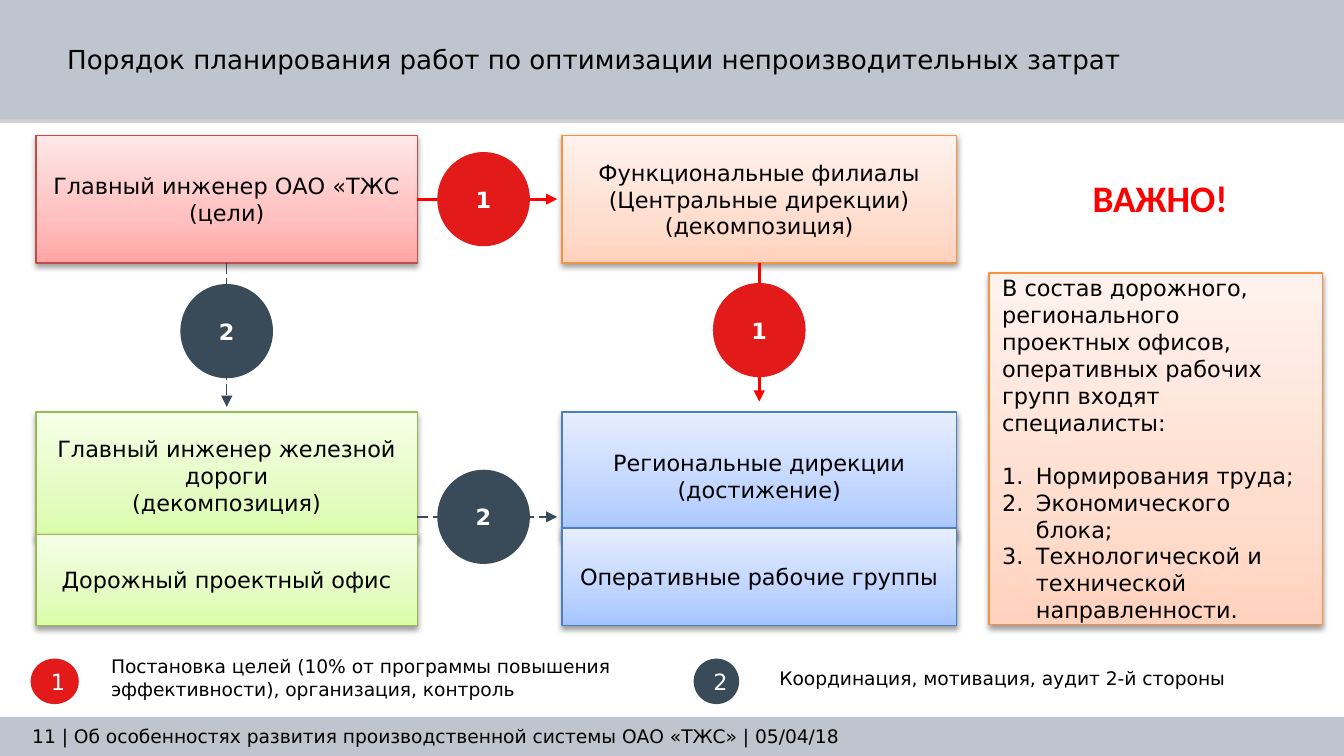
from lxml import etree
from pptx import Presentation
from pptx.dml.color import RGBColor
from pptx.enum.dml import MSO_LINE
from pptx.enum.shapes import MSO_CONNECTOR, MSO_SHAPE
from pptx.enum.text import MSO_ANCHOR, PP_ALIGN
from pptx.oxml.ns import qn
from pptx.util import Cm, Pt

RECT, OVAL = MSO_SHAPE.RECTANGLE, MSO_SHAPE.OVAL
STRAIGHT, LONG_DASH = MSO_CONNECTOR.STRAIGHT, MSO_LINE.LONG_DASH
LEFT, CENTER = PP_ALIGN.LEFT, PP_ALIGN.CENTER
TOP, MIDDLE = MSO_ANCHOR.TOP, MSO_ANCHOR.MIDDLE
SIDE_BOTTOM, SIDE_RIGHT = 2, 3

FONT = "DejaVu Sans"
BAND, RED, ARROW_RED, SLATE = "BFC5CE", "E21A1A", "FF0000", "394A58"
# Border, then gradient colours from bottom to top
PINK = ("BF4C48", "FFA6A5", "FFC0BF", "FFE7E7")
GREEN = ("98B955", "DAFDA7", "E4FCC2", "F5FFE7")
ORANGE = ("F69240", "FFD2BD", "FFDED0", "FFF2ED")
BLUE = ("4B7EBC", "A4C4FF", "BFD4FF", "E6EEFF")


def rgb(color):
    return RGBColor.from_string(color)


def sub(parent, tag, **attrs):
    return etree.SubElement(parent, qn(tag), {k: str(v) for k, v in attrs.items()})


def add_color(parent, color, alpha=100):
    clr = sub(parent, "a:srgbClr", val=color)
    if alpha < 100:
        sub(clr, "a:alpha", val=alpha * 1000)


def add_shadow(s, color, alpha, blur, dist):
    s.shadow.inherit = False
    effects = s._element.spPr.find(qn("a:effectLst"))
    shadow = sub(effects, "a:outerShdw", blurRad=Pt(blur), dist=Pt(dist),
                 dir=5400000, rotWithShape=0)
    add_color(shadow, color, alpha)


def set_gradient(s, colors):
    s.fill.gradient()
    s.fill.gradient_angle = 90
    stops = s._element.spPr.find(qn("a:gradFill")).find(qn("a:gsLst"))
    for old in list(stops):
        stops.remove(old)
    for pos, color in zip((0, 35, 100), colors):
        add_color(sub(stops, "a:gs", pos=pos * 1000), color)


def write(s, lines, size=12, color="000000", bold=False, align=CENTER,
          anchor=MIDDLE, font=FONT, numbered_from=None):
    """Write one paragraph per line; those from numbered_from on are a numbered list."""
    tf = s.text_frame
    tf.word_wrap = True
    tf.vertical_anchor = anchor
    for i, line in enumerate(lines):
        p = tf.paragraphs[0] if i == 0 else tf.add_paragraph()
        p.alignment = align
        if numbered_from is not None and i >= numbered_from:
            if i == numbered_from:
                p.space_before = Pt(14)
            pPr = p._p.get_or_add_pPr()
            pPr.set("marL", str(Cm(0.64)))
            pPr.set("indent", str(-Cm(0.64)))
            sub(pPr, "a:buFont", typeface="+mj-lt")
            sub(pPr, "a:buAutoNum", type="arabicPeriod")
        r = p.add_run()
        r.text = line
        r.font.name, r.font.size, r.font.bold = font, Pt(size), bold
        r.font.color.rgb = rgb(color)


def add_text(slide, x, y, w, h, lines, inset=0.25, **style):
    s = slide.shapes.add_textbox(Cm(x), Cm(y), Cm(w), Cm(h))
    s.text_frame.margin_left = Cm(inset)
    write(s, lines, **style)


def add_plain(slide, kind, x, y, w, h, color):
    s = slide.shapes.add_shape(kind, Cm(x), Cm(y), Cm(w), Cm(h))
    s.fill.solid()
    s.fill.fore_color.rgb = rgb(color)
    s.line.fill.background()
    s.shadow.inherit = False
    return s


def add_card(slide, x, y, w, h, palette, lines, **style):
    s = slide.shapes.add_shape(RECT, Cm(x), Cm(y), Cm(w), Cm(h))
    set_gradient(s, palette[1:])
    s.line.color.rgb = rgb(palette[0])
    s.line.width = Pt(0.75)
    add_shadow(s, "000000", 38, 3.1, 1.6)
    write(s, lines, **style)
    return s


def add_badge(slide, x, y, w, h, number, color, bold=True):
    s = add_plain(slide, OVAL, x, y, w, h, color)
    write(s, [number], color="FFFFFF", bold=bold)


def add_arrow(slide, x1, y1, x2, y2, color, width, dashed=False, start=None):
    """Draw an arrow; start is an optional (shape, side) to join its beginning to."""
    s = slide.shapes.add_connector(STRAIGHT, Cm(x1), Cm(y1), Cm(x2), Cm(y2))
    if start:
        s.begin_connect(*start)
    s.line.color.rgb = rgb(color)
    s.line.width = Pt(width)
    if dashed:
        s.line.dash_style = LONG_DASH
    sub(s.line._get_or_add_ln(), "a:tailEnd", type="triangle")
    sub(s._element.spPr, "a:effectLst")


def add_band(slide, x, y, w, h):
    add_shadow(add_plain(slide, RECT, x, y, w, h, BAND), "808080", 35, 0, 1.8)


def add_header(slide, x, y, w, h):
    add_band(slide, x, y, w, h)
    add_text(slide, x, y + 0.69, w, 0.86,
             ["Порядок планирования работ по оптимизации непроизводительных затрат"],
             inset=1.27, size=14, align=LEFT, anchor=TOP)


def add_footer(slide, x, y, w, h):
    add_band(slide, x, y, w, h)
    add_text(slide, x + 0.36, y, w - 2.4, h,
             ["11 | Об особенностях развития производственной системы "
              "ОАО «ТЖС» | 05/04/18"], size=10, align=LEFT)


def add_flow(slide, x, y, w, h):
    left_w, right_w, card_h = 7.21, 7.46, 2.41
    right_x = x + w - right_w
    low_y, bottom = y + 5.23, y + h
    left_mid, right_mid = x + left_w / 2, right_x + right_w / 2
    gap_mid, row_mid = x + 8.46, y + 7.21

    chief = add_card(slide, x, y, left_w, card_h, PINK,
                     ["Главный инженер ОАО «ТЖС", "(цели)"])
    branches = add_card(slide, right_x, y, right_w, card_h, ORANGE,
                        ["Функциональные филиалы (Центральные дирекции)",
                         "(декомпозиция)"])
    add_card(slide, x, low_y, left_w, card_h, GREEN,
             ["Главный инженер железной дороги", "(декомпозиция)"])
    add_card(slide, right_x, low_y, right_w, card_h, BLUE,
             ["Региональные дирекции", "(достижение)"])
    add_card(slide, x, bottom - 1.73, left_w, 1.73, GREEN, ["Дорожный проектный офис"])
    add_card(slide, right_x, bottom - 1.85, right_w, 1.85, BLUE,
             ["Оперативные рабочие группы"])

    chief_mid, upper_end = y + card_h / 2, y + card_h
    side, tip = x + left_w, right_x - 0.09
    red, slate = (ARROW_RED, 1.5), (SLATE, 0.75, True)
    add_arrow(slide, side, chief_mid, tip, chief_mid, *red, start=(chief, SIDE_RIGHT))
    add_arrow(slide, right_mid, upper_end, right_mid, low_y - 0.2, *red,
              start=(branches, SIDE_BOTTOM))
    add_arrow(slide, left_mid, upper_end, left_mid, low_y - 0.1, *slate,
              start=(chief, SIDE_BOTTOM))
    add_arrow(slide, side, row_mid, tip, row_mid, *slate)

    badge_w, badge_h = 1.75, 1.78
    for cx, cy, number, color in ((gap_mid, chief_mid, "1", RED),
                                  (right_mid, y + 3.68, "1", RED),
                                  (left_mid, y + 3.7, "2", SLATE),
                                  (gap_mid, row_mid, "2", SLATE)):
        add_badge(slide, cx - badge_w / 2, cy - badge_h / 2, badge_w, badge_h,
                  number, color)


def add_note(slide, x, y, w, h):
    add_text(slide, x + 0.16, y, w - 0.38, 1.12, ["ВАЖНО!"], inset=0.48, size=20,
             color=ARROW_RED, bold=True, anchor=TOP, font="Calibri")
    add_card(slide, x, y + 1.98, w, h - 1.98, ORANGE,
             ["В состав дорожного, регионального проектных офисов, "
              "оперативных рабочих групп входят специалисты:",
              "Нормирования труда;", "Экономического блока;",
              "Технологической и технической направленности."],
             align=LEFT, numbered_from=1)


def add_legend(slide, x, y, w, h):
    badge_y = y + 0.2
    add_badge(slide, x, badge_y, 0.91, 0.86, "1", RED, bold=False)
    add_badge(slide, x + 12.53, badge_y, 0.86, 0.86, "2", SLATE, bold=False)
    style = dict(size=10, align=LEFT)
    add_text(slide, x + 1.27, y, 10.59, h,
             ["Постановка целей (10% от программы повышения эффективности), "
              "организация, контроль"], **style)
    add_text(slide, x + 13.9, y, w - 13.9, h,
             ["Координация, мотивация, аудит 2-й стороны"], **style)


def main():
    prs = Presentation()
    prs.slide_width, prs.slide_height = Cm(25.4), Cm(14.29)
    slide = prs.slides.add_slide(prs.slide_layouts[6])
    add_header(slide, 0, 0, 25.4, 2.26)
    add_footer(slide, 0, 13.55, 25.4, 0.74)
    add_legend(slide, 0.58, 12.25, 23.43, 1.12)
    add_flow(slide, 0.68, 2.56, 17.4, 9.27)
    add_note(slide, 18.69, 3.18, 6.3, 8.63)
    prs.save("out.pptx")


if __name__ == "__main__":
    main()
